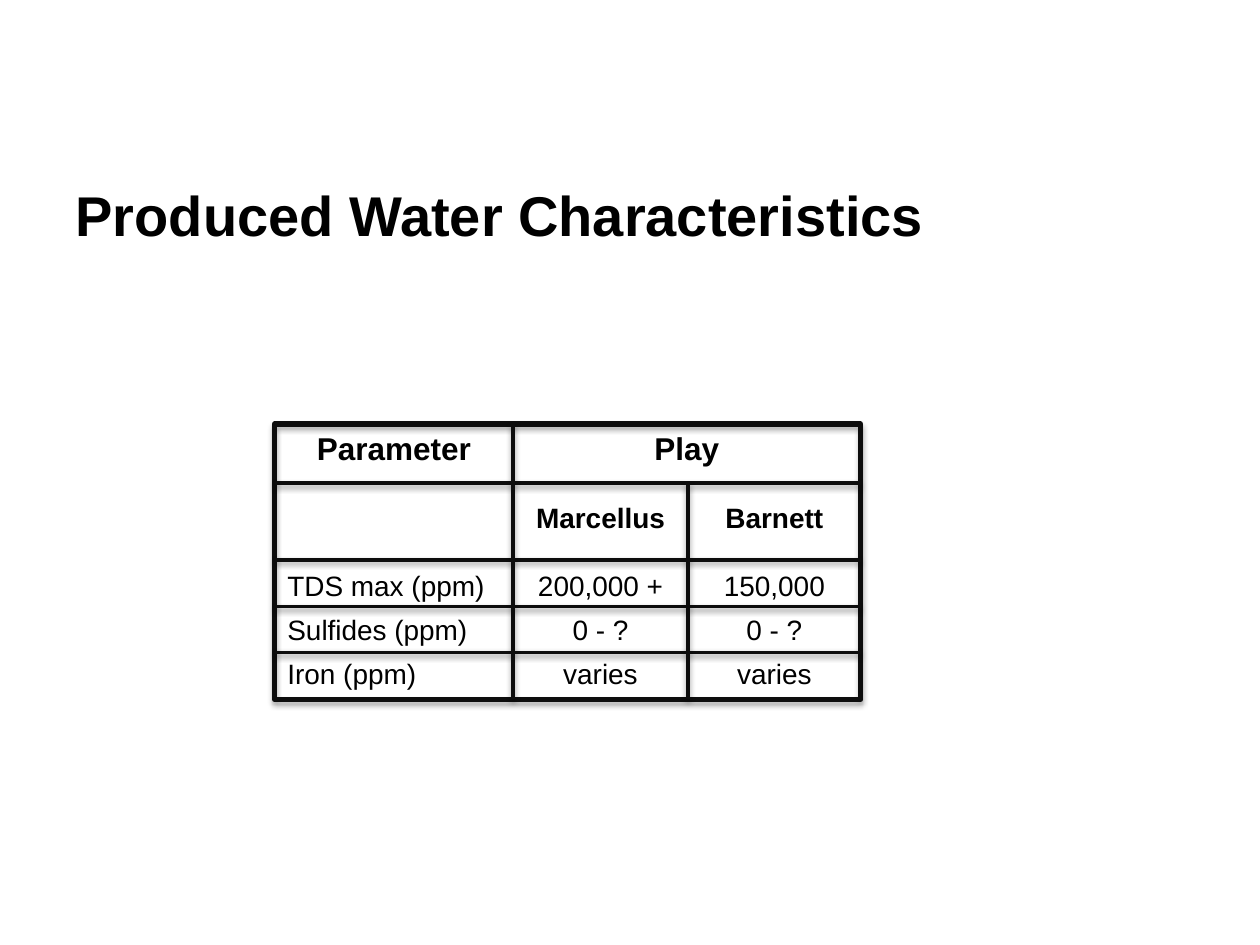
from dataclasses import dataclass

from lxml import etree
from pptx import Presentation, util as u
from pptx.dml.color import RGBColor
from pptx.enum import shapes, text
from pptx.oxml import ns


@dataclass(frozen=True)
class Theme:
    font: str = "Arial"
    ink: str = "000000"
    rule: str = "0D0D0D"
    title: int = 32
    head: int = 18
    body: int = 16
    outer: int = 3
    inner: int = 2
    plain: str = "{2D5ABB26-0587-4C30-8999-92F81FD0307C}"


THEME = Theme()
LEFT, TOP = 5.54, 8.55
COLS = [4.8, 3.53, 3.48]
ROWS = [1.19, 1.55, 0.94, 0.92, 0.95]
WIDE, HIGH = sum(COLS), sum(ROWS)
PADS = [(0, 0.16), (0, 0.1), (0.12, 0), (0.04, 0), (0, 0.04)]
DATA = [
    ["Parameter", "Play", ""],
    ["", "Marcellus", "Barnett"],
    ["TDS max (ppm)", "200,000 +", "150,000"],
    ["Sulfides (ppm)", "0 - ?", "0 - ?"],
    ["Iron (ppm)", "varies", "varies"],
]


def style(para, size, bold, align):
    para.alignment = align
    for run in para.runs:
        font = run.font
        font.name, font.size, font.bold = THEME.font, u.Pt(size), bold
        font.color.rgb = RGBColor.from_string(THEME.ink)


def add_title(slide, words):
    box = slide.shapes.title
    box.left, box.top = u.Cm(1.27), u.Cm(3.42)
    box.width, box.height = u.Cm(22.86), u.Cm(1.98)
    frame = box.text_frame
    frame.text = words
    frame.vertical_anchor = text.MSO_ANCHOR.MIDDLE
    para = frame.paragraphs[0]
    para.line_spacing = 0.9
    style(para, THEME.title, True, text.PP_ALIGN.LEFT)


def set_cell(cell, row, col):
    head = row < 2
    cell.text = DATA[row][col]
    cell.vertical_anchor = text.MSO_ANCHOR.MIDDLE
    cell.margin_top, cell.margin_bottom = [u.Cm(n) for n in PADS[row]]
    left = col == 0 and not head
    align = text.PP_ALIGN.LEFT if left else text.PP_ALIGN.CENTER
    size = THEME.head if row == 0 else THEME.body
    style(cell.text_frame.paragraphs[0], size, head, align)
    cell.fill.background()


def add_grid(slide):
    area = [u.Cm(n) for n in (LEFT, TOP, WIDE, HIGH)]
    table = slide.shapes.add_table(len(ROWS), len(COLS), *area).table
    table.first_row = table.horz_banding = False
    table._tbl.tblPr.find(ns.qn("a:tableStyleId")).text = THEME.plain
    for col, width in zip(table.columns, COLS):
        col.width = u.Cm(width)
    for row, height in zip(table.rows, ROWS):
        row.height = u.Cm(height)
    for row in range(len(ROWS)):
        for col in range(len(COLS)):
            set_cell(table.cell(row, col), row, col)
    table.cell(0, 1).merge(table.cell(0, 2))


def set_line(shape, width):
    shape.line.color.rgb = RGBColor.from_string(THEME.rule)
    shape.line.width = u.Pt(width)


def add_shade(shape, dist, alpha):
    """Cast a soft shadow straight down."""
    effects = etree.SubElement(shape._element.spPr, ns.qn("a:effectLst"))
    shade = etree.SubElement(
        effects, ns.qn("a:outerShdw"), blurRad=str(u.Pt(3.1)),
        dist=str(u.Pt(dist)), dir="5400000", rotWithShape="0")
    color = etree.SubElement(shade, ns.qn("a:srgbClr"), val=THEME.ink)
    etree.SubElement(color, ns.qn("a:alpha"), val=str(alpha * 1000))


def add_frame(slide):
    area = [u.Cm(n) for n in (LEFT, TOP, WIDE, HIGH)]
    box = slide.shapes.add_shape(shapes.MSO_SHAPE.RECTANGLE, *area)
    box.fill.background()
    set_line(box, THEME.outer)
    # Rounded corners of the outline
    etree.SubElement(box._element.spPr.find(ns.qn("a:ln")), ns.qn("a:round"))
    add_shade(box, 1.8, 35)


def add_rule(slide, *ends):
    rule = slide.shapes.add_connector(
        shapes.MSO_CONNECTOR.STRAIGHT, *[u.Cm(n) for n in ends])
    set_line(rule, THEME.inner)
    add_shade(rule, 1.6, 38)


def add_rules(slide):
    # Between rows
    for i in range(1, len(ROWS)):
        y = TOP + sum(ROWS[:i])
        add_rule(slide, LEFT, y, LEFT + WIDE, y)
    # Between columns; the second starts below the "Play" heading
    for i, start in enumerate((TOP, TOP + ROWS[0]), 1):
        x = LEFT + sum(COLS[:i])
        add_rule(slide, x, start, x, TOP + HIGH)


def main():
    deck = Presentation()
    deck.slide_width, deck.slide_height = u.Cm(25.4), u.Cm(19.05)
    slide = deck.slides.add_slide(deck.slide_layouts[5])
    add_title(slide, "Produced Water Characteristics")
    add_grid(slide)
    add_frame(slide)
    add_rules(slide)
    deck.save("out.pptx")


if __name__ == "__main__":
    main()
